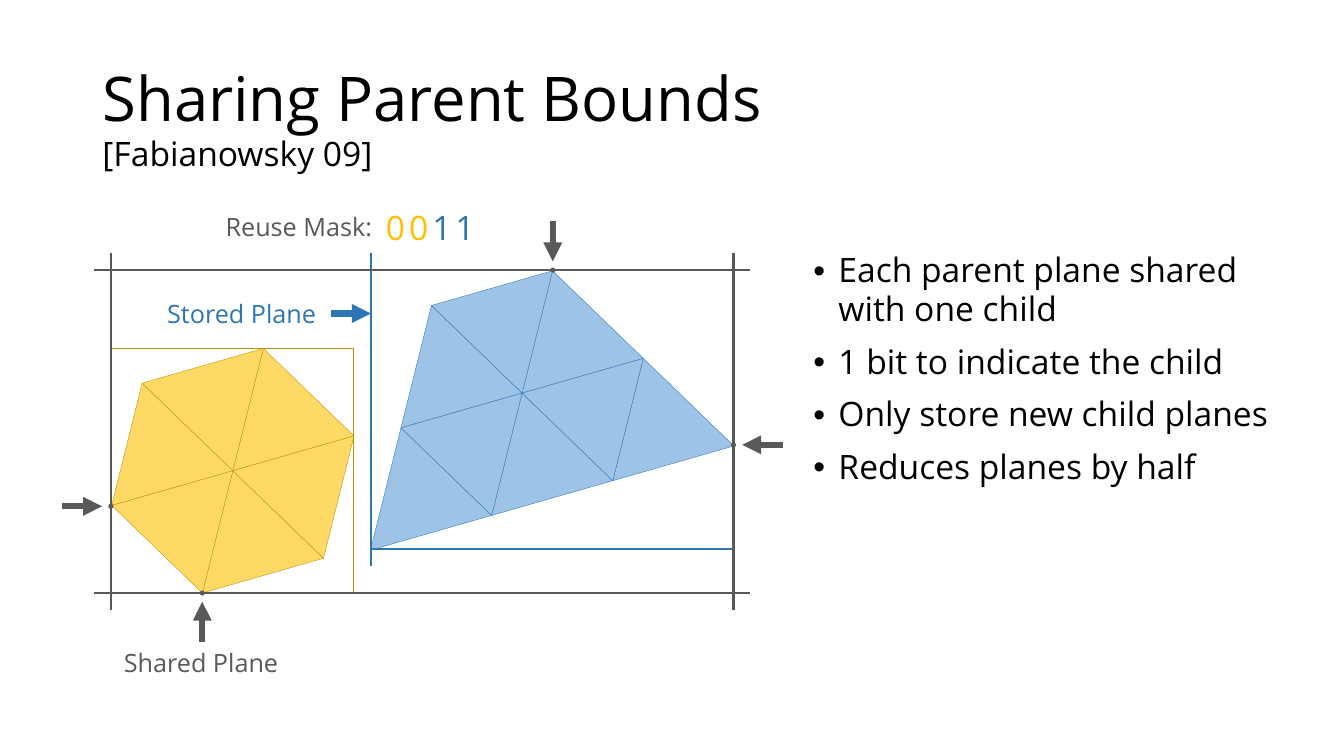
import math

from lxml import etree
from pptx import Presentation
from pptx import util as u
from pptx.dml.color import RGBColor
from pptx.enum import shapes, text
from pptx.oxml.ns import qn

COLORS = {
    "black": "000000", "shared": "595959", "stored": "2E75B6",
    "right_child": "9DC3E6", "left_child": "FFD966",
    "left_edge": "BF9000", "left_bit": "FFC000",
}
FONT = "Open Sans"

# Square grid: 40 columns by 22.5 rows
SLIDE_W, SLIDE_H = u.Inches(13.333), u.Inches(7.5)
CELL = SLIDE_W / 40

# Parent bounds and the planes of the two children, in grid cells
LEFT, TOP, RIGHT, BOTTOM = 3.3, 8.04, 21.83, 17.65
SPLIT, RIGHT_CHILD_BOTTOM = 11.04, 16.35
LEFT_CHILD_TOP, LEFT_CHILD_RIGHT = 10.38, 10.53
OVERSHOOT = 0.5

# Triangle lattice, tilted by 16 degrees
EDGE, TILT = 3.75, 16
HEIGHT = 3.25
SIN, COS = math.sin(math.radians(TILT)), math.cos(math.radians(TILT))
ALONG = (EDGE * COS, -EDGE * SIN)
UP = (-HEIGHT * SIN, -HEIGHT * COS)

# Touching points with the direction of the arrow at each
SHARED_POINTS = [
    ((16.45, TOP), (0, 1)),
    ((RIGHT, 13.24), (-1, 0)),
    ((LEFT, 15.07), (1, 0)),
    ((6.02, BOTTOM), (0, -1)),
]
ARROW_LENGTH, ARROW_GAP, DOT = 1.2, 0.26, 0.15

BULLETS = [
    "Each parent plane shared with one child",
    "1 bit to indicate the child",
    "Only store new child planes",
    "Reduces planes by half",
]


def cells(*lengths):
    return [round(length * CELL) for length in lengths]


def rgb(name):
    return RGBColor.from_string(COLORS[name])


def format_run(run, size, color):
    run.font.name, run.font.size = FONT, u.Pt(size)
    run.font.color.rgb = rgb(color)


def add_preset(parent, preset, box, fill=None, line=None, weight=1):
    outline = parent.add_shape(preset, *cells(*box))
    outline.shadow.inherit = False
    if fill:
        outline.fill.solid()
        outline.fill.fore_color.rgb = rgb(fill)
    else:
        outline.fill.background()
    if line:
        outline.line.color.rgb = rgb(line)
        outline.line.width = u.Pt(weight)
    else:
        outline.line.fill.background()
    return outline


def add_bounds(slide, left, top, right, bottom, line, weight):
    add_preset(slide.shapes, shapes.MSO_SHAPE.RECTANGLE,
               (left, top, right - left, bottom - top), line=line, weight=weight)


def add_line(slide, start, end, color, weight=1.5, arrow=False):
    line = slide.shapes.add_connector(
        shapes.MSO_CONNECTOR.STRAIGHT, *cells(*start, *end))
    line.line.color.rgb = rgb(color)
    line.line.width = u.Pt(weight)
    if arrow:
        etree.SubElement(line.line._get_or_add_ln(), qn("a:tailEnd"), type="triangle")
    etree.SubElement(line._element.spPr, qn("a:effectLst"))


def add_arrow(slide, tip, direction, color):
    start = [t - ARROW_LENGTH * d for t, d in zip(tip, direction)]
    add_line(slide, start, tip, color, weight=4.5, arrow=True)


def add_label(slide, wording, box, size, color):
    frame = slide.shapes.add_textbox(*cells(*box)).text_frame
    frame.word_wrap = False
    frame.auto_size = text.MSO_AUTO_SIZE.SHAPE_TO_FIT_TEXT
    frame.text = wording
    format_run(frame.paragraphs[0].runs[0], size, color)


def add_mesh(slide, origin, upright, inverted, fill, line):
    """Triangles at lattice nodes (i, j); inverted ones stand on their node."""
    mesh = slide.shapes.add_group_shape()
    for nodes, shift, rotation in ((upright, 0.5, -TILT), (inverted, 0, 180 - TILT)):
        for i, j in nodes:
            # One step in j goes half an edge along and one height up
            x, y = (o + (i + j / 2 + shift) * a + (j + 0.5) * h
                    for o, a, h in zip(origin, ALONG, UP))
            triangle = add_preset(
                mesh.shapes, shapes.MSO_SHAPE.ISOSCELES_TRIANGLE,
                (x - EDGE / 2, y - HEIGHT / 2, EDGE, HEIGHT), fill, line, 0.25)
            triangle.rotation = rotation % 360


def add_title(slide):
    title = slide.shapes.title
    title.left, title.top, title.width, title.height = cells(2.75, 1.2, 34.5, 4.35)
    frame = title.text_frame
    frame.auto_size = text.MSO_AUTO_SIZE.NONE
    frame.vertical_anchor = text.MSO_ANCHOR.MIDDLE
    frame.margin_top = u.Inches(0.18)
    heading = frame.paragraphs[0]
    heading.alignment = text.PP_ALIGN.LEFT
    heading.line_spacing = 0.94
    for wording, size in (("Sharing Parent Bounds", 44), ("[Fabianowsky 09]", 24)):
        if heading.runs:
            heading.add_line_break()
        run = heading.add_run()
        run.text = wording
        format_run(run, size, "black")


def add_bullets(slide):
    frame = slide.shapes.add_textbox(*cells(23.91, 7.35, 14.22, 12.9)).text_frame
    frame.word_wrap = True
    for number, wording in enumerate(BULLETS):
        point = frame.add_paragraph() if number else frame.paragraphs[0]
        point.text = wording
        point.line_spacing = 0.96
        point.space_before = u.Pt(10 if number else 0)
        format_run(point.runs[0], 24, "black")
        props = point._p.get_or_add_pPr()
        props.set("marL", str(u.Inches(0.25)))
        props.set("indent", str(-u.Inches(0.25)))
        etree.SubElement(props, qn("a:buFont"), typeface="Arial")
        etree.SubElement(props, qn("a:buChar"), char="•")


def main():
    deck = Presentation()
    deck.slide_width, deck.slide_height = SLIDE_W, SLIDE_H
    slide = deck.slides.add_slide(deck.slide_layouts[5])
    add_title(slide)

    # Triangle meshes of the two children
    hexagon_up = [(0, 0), (-1, 0), (0, -1)]
    add_mesh(slide, (6.93, 14.01), hexagon_up, [(0, 0), (0, -1), (1, -1)],
             "left_child", "left_edge")
    add_mesh(slide, (15.54, 11.7), hexagon_up + [(1, -1), (-1, -1)],
             [(0, 0), (0, -1), (1, -1)], "right_child", "stored")

    # Bounds and shared points
    add_bounds(slide, LEFT, LEFT_CHILD_TOP, LEFT_CHILD_RIGHT, BOTTOM, "left_edge", 1)
    add_bounds(slide, LEFT, TOP, RIGHT, BOTTOM, "shared", 1)
    for point, direction in SHARED_POINTS:
        tip = [p - ARROW_GAP * d for p, d in zip(point, direction)]
        add_arrow(slide, tip, direction, "shared")
        corner = [p - DOT / 2 for p in point]
        add_preset(slide.shapes, shapes.MSO_SHAPE.OVAL, (*corner, DOT, DOT), "shared")
    add_arrow(slide, (SPLIT, 9.33), (1, 0), "stored")

    # Labels and reuse mask
    add_label(slide, "Shared Plane", (3.39, 19.11, 5.25, 1.2), 18, "shared")
    add_label(slide, "Stored Plane", (4.68, 8.73, 5.07, 1.2), 18, "stored")
    add_label(slide, "Reuse Mask:", (6.42, 6.15, 5.01, 1.2), 18, "shared")
    for place, bit in enumerate("0011"):
        add_label(slide, bit, (11.19 + 0.69 * place, 6, 1.17, 1.5), 24,
                  "stored" if bit == "1" else "left_bit")

    # Planes, running past the corners
    add_bounds(slide, SPLIT, TOP, RIGHT, RIGHT_CHILD_BOTTOM, "stored", 1.5)
    for x, bottom, color in ((LEFT, BOTTOM, "shared"), (RIGHT, BOTTOM, "shared"),
                             (SPLIT, RIGHT_CHILD_BOTTOM, "stored")):
        add_line(slide, (x, bottom + OVERSHOOT), (x, TOP - OVERSHOOT), color)
    for y in (BOTTOM, TOP):
        add_line(slide, (RIGHT + OVERSHOOT, y), (LEFT - OVERSHOOT, y), "shared")

    add_bullets(slide)
    deck.save("out.pptx")


if __name__ == "__main__":
    main()
